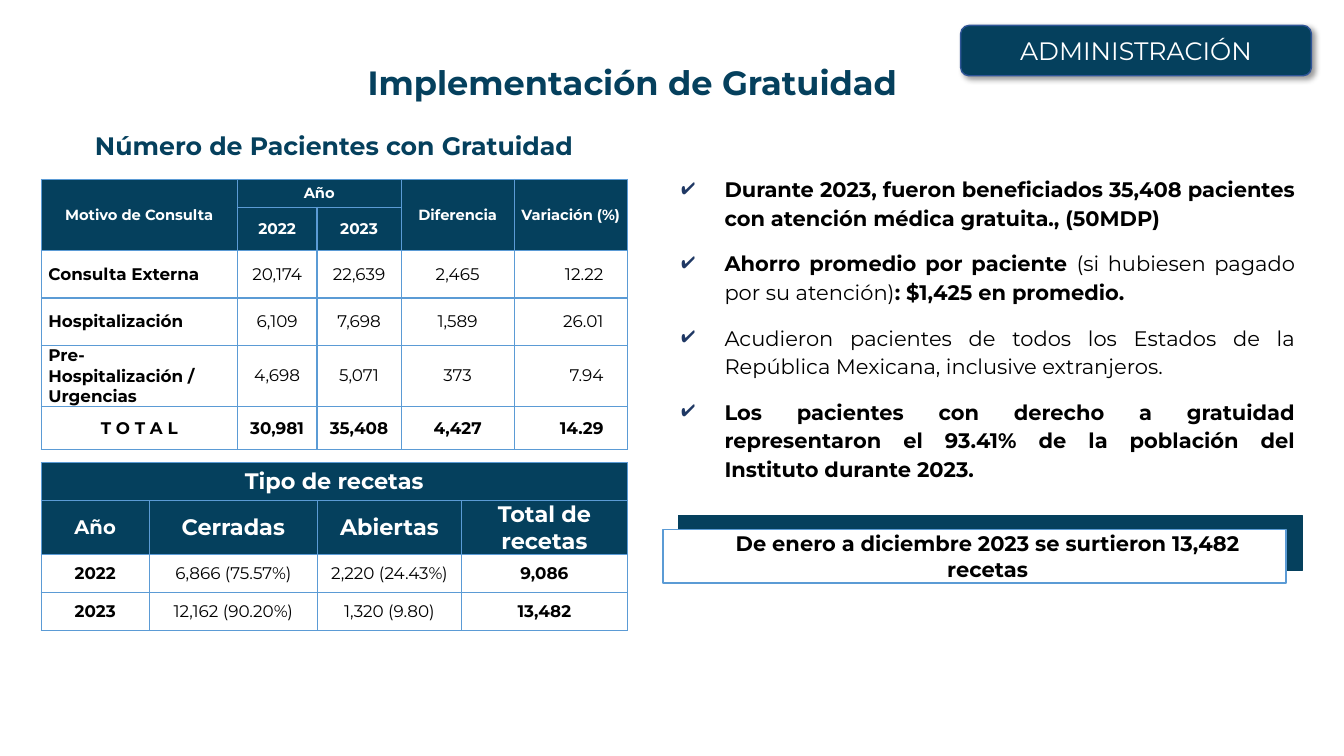
from pptx import Presentation
from pptx.dml.color import RGBColor
from pptx.enum.shapes import MSO_SHAPE
from pptx.enum.text import MSO_ANCHOR, MSO_AUTO_SIZE, PP_ALIGN
from pptx.oxml import parse_xml
from pptx.oxml.ns import nsdecls
from pptx.util import Cm, Pt

RECT, ROUNDED = MSO_SHAPE.RECTANGLE, MSO_SHAPE.ROUNDED_RECTANGLE
LEFT, CENTER, RIGHT, JUSTIFY = PP_ALIGN.LEFT, PP_ALIGN.CENTER, PP_ALIGN.RIGHT, PP_ALIGN.JUSTIFY
MIDDLE = MSO_ANCHOR.MIDDLE
FIT_SHAPE, NO_FIT = MSO_AUTO_SIZE.SHAPE_TO_FIT_TEXT, MSO_AUTO_SIZE.NONE
NAVY, BLUE, WHITE, BLACK = "05405D", "5B9BD5", "FFFFFF", "000000"
BADGE_LINE, CHECK = "2F5597", "1F3864"


def paint(fill, color):
    fill.solid()
    fill.fore_color.rgb = RGBColor.from_string(color)


def write(paragraph, text, size=12, color=BLACK, bold=True, align=CENTER):
    """Append a formatted run to the paragraph."""
    paragraph.alignment = align
    run = paragraph.add_run()
    run.text = text
    run.font.name = "Montserrat"
    run.font.size = Pt(size)
    run.font.bold = bold
    paint(run.font.fill, color)


prs = Presentation()
prs.slide_width, prs.slide_height = Cm(33.87), Cm(19.05)
slide = prs.slides.add_slide(prs.slide_layouts[5])
shapes = slide.shapes

# Headings
title = shapes.title
title.left, title.top, title.width, title.height = Cm(7.92), Cm(1.47), Cm(16.03), Cm(1.22)
title.text_frame.auto_size = NO_FIT
title.text_frame.vertical_anchor = MIDDLE
write(title.text_frame.paragraphs[0], "Implementación de Gratuidad", size=24, color=NAVY)

subtitle = shapes.add_textbox(Cm(1.04), Cm(3.15), Cm(14.76), Cm(1.02)).text_frame
subtitle.word_wrap = True
write(subtitle.paragraphs[0], "Número de Pacientes con Gratuidad", size=18, color=NAVY)

# Banner with its backing, and the section badge
boxes = [
    (RECT, 17.09, 12.98, 15.72, 1.4, NAVY, NAVY, 0.5),
    (RECT, 16.71, 13.34, 15.7, 1.35, WHITE, BLUE, 1),
    (ROUNDED, 24.21, 0.64, 8.84, 1.27, NAVY, BADGE_LINE, 1),
]
drawn = []
for preset, left, top, width, height, fill, line, weight in boxes:
    box = shapes.add_shape(preset, Cm(left), Cm(top), Cm(width), Cm(height))
    box.shadow.inherit = False
    paint(box.fill, fill)
    paint(box.line.fill, line)
    box.line.width = Pt(weight)
    box.text_frame.vertical_anchor = MIDDLE
    drawn.append(box)
backing, banner, badge = drawn

banner.text_frame.margin_left, banner.text_frame.margin_right = Cm(1.32), Cm(0.66)
write(banner.text_frame.paragraphs[0],
      "De enero a diciembre 2023 se surtieron 13,482 recetas", size=15)
write(badge.text_frame.paragraphs[0], "ADMINISTRACIÓN", size=18, color=WHITE, bold=False)
badge.element.spPr.find("{*}effectLst").append(parse_xml(
    f'<a:outerShdw {nsdecls("a")} blurRad="{Pt(4)}" dist="{Pt(3)}" dir="2700000" algn="tl" rotWithShape="0">'
    f'<a:srgbClr val="{BLACK}"><a:alpha val="40000"/></a:srgbClr></a:outerShdw>'))

# Tables: both have two header rows
patients = [
    ["Motivo de Consulta", "Año", None, "Diferencia", "Variación (%)"],
    [None, "2022", "2023", None, None],
    ["Consulta Externa", "20,174", "22,639", "2,465", "12.22"],
    ["Hospitalización", "6,109", "7,698", "1,589", "26.01"],
    ["Pre-Hospitalización / Urgencias", "4,698", "5,071", "373", "7.94"],
    ["T O T A L", "30,981", "35,408", "4,427", "14.29"],
]
prescriptions = [
    ["Tipo de recetas", None, None, None],
    ["Año", "Cerradas", "Abiertas", "Total de recetas"],
    ["2022", "6,866 (75.57%)", "2,220 (24.43%)", "9,086"],
    ["2023", "12,162 (90.20%)", "1,320 (9.80)", "13,482"],
]
patient_merges = [(0, 0, 1, 0), (0, 1, 0, 2), (0, 3, 1, 3), (0, 4, 1, 4)]
tables = [
    (patients, 4.52, [4.94, 2.01, 2.12, 2.85, 2.85],
     [0.7, 1.09, 1.2, 1.2, 1.2, 1.1], patient_merges),
    (prescriptions, 11.66, [2.72, 4.24, 3.63, 4.18], [0.96] * 4, [(0, 0, 0, 3)]),
]
for values, top, widths, heights, merges in tables:
    table = shapes.add_table(len(heights), len(widths), Cm(1.04), Cm(top),
                             Cm(sum(widths)), Cm(sum(heights))).table
    table.first_row = table.horz_banding = False
    for column, width in zip(table.columns, widths):
        column.width = Cm(width)
    for row, height in zip(table.rows, heights):
        row.height = Cm(height)
    for r1, c1, r2, c2 in merges:
        table.cell(r1, c1).merge(table.cell(r2, c2))

    by_patient = values is patients
    for r, row_values in enumerate(values):
        for c, value in enumerate(row_values):
            cell = table.cell(r, c)
            header = r < 2
            cell.vertical_anchor = MIDDLE
            cell.margin_left = cell.margin_right = Cm(0.18 if by_patient and c == 0 else 0.03)
            cell.margin_top = cell.margin_bottom = 0
            paint(cell.fill, NAVY if header else WHITE)
            for i, side in enumerate(["lnL", "lnR", "lnT", "lnB"]):
                cell._tc.tcPr.insert(i, parse_xml(
                    f'<a:{side} {nsdecls("a")} w="{Pt(1)}"><a:solidFill>'
                    f'<a:srgbClr val="{BLUE}"/></a:solidFill></a:{side}>'))
            if value is None:
                continue

            size, align = 12, CENTER
            if header and by_patient:
                size = 10.5 if r == 0 else 11
            elif header:
                size = 14 if value == "Año" else 16
            elif by_patient and c == 4:
                align = RIGHT
                cell.margin_right = Cm(0.6)
            elif by_patient and c == 0 and r < 5:
                align = LEFT
            strong = header or c == 0 or (r == 5 if by_patient else c == 3)
            write(cell.text_frame.paragraphs[0], value, size=size,
                  color=WHITE if header else BLACK, bold=strong, align=align)

# Findings: each one is a list of (text, bold) parts
findings = [
    [("Durante 2023, fueron beneficiados 35,408 pacientes con atención médica gratuita., (50MDP)", True)],
    [("Ahorro promedio por paciente ", True), ("(si hubiesen pagado por su atención)", False),
     (": $1,425 en promedio.", True)],
    [("Acudieron pacientes de todos los Estados de la República Mexicana, inclusive extranjeros.", False)],
    [("Los pacientes con derecho a gratuidad representaron el 93.41% de la población del "
      "Instituto durante 2023.", True)],
]
body = shapes.add_textbox(Cm(15.95), Cm(4.24), Cm(16.94), Cm(8.08)).text_frame
body.word_wrap = True
body.auto_size = FIT_SHAPE
for i, parts in enumerate(findings):
    paragraph = body.add_paragraph() if i else body.paragraphs[0]
    paragraph.level = 1
    paragraph.line_spacing = 1.14
    paragraph.space_after = Pt(12)
    properties = paragraph._p.get_or_add_pPr()
    properties.set("marL", str(Cm(2.06)))
    properties.set("indent", str(Cm(-1.09)))
    properties.append(parse_xml(
        f'<a:buClr {nsdecls("a")}><a:srgbClr val="{CHECK}"/></a:buClr>'))
    properties.append(parse_xml(f'<a:buChar {nsdecls("a")} char="✔"/>'))
    for text, bold in parts:
        write(paragraph, text, size=15, bold=bold, align=JUSTIFY)

prs.save("out.pptx")
